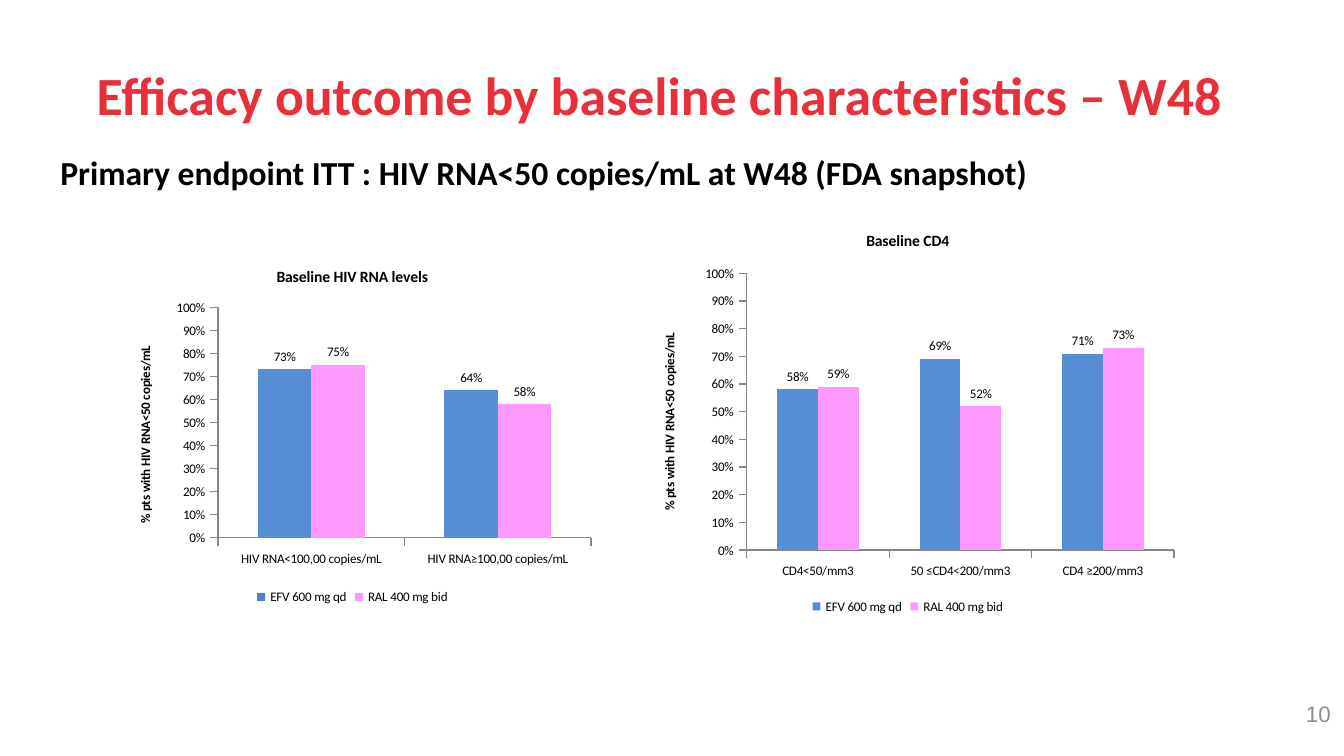
from lxml.etree import SubElement
from pptx import Presentation
from pptx.chart.data import CategoryChartData as ChartData
from pptx.dml.color import RGBColor
from pptx.enum.chart import XL_CHART_TYPE as ChartType
from pptx.enum.chart import XL_LABEL_POSITION as LabelPosition
from pptx.enum.chart import XL_LEGEND_POSITION as LegendPosition
from pptx.enum.chart import XL_TICK_MARK as TickMark
from pptx.enum.text import MSO_ANCHOR as Anchor
from pptx.enum.text import PP_ALIGN as Align
from pptx.oxml.ns import qn
from pptx.util import Cm, Pt

RED = RGBColor(0xE8, 0x30, 0x3B)
BLACK = RGBColor(0x00, 0x00, 0x00)
GRAY = RGBColor(0x8C, 0x8C, 0x8C)
AXIS_GRAY = RGBColor(0x86, 0x86, 0x86)
BLUE = RGBColor(0x55, 0x8E, 0xD5)
DARK_BLUE = RGBColor(0x4F, 0x81, 0xBD)
PINK = RGBColor(0xFF, 0x99, 0xFF)


def write(frame, text, size=7, bold=False, color=BLACK, font="Calibri", align=Align.LEFT):
    paragraph = frame.paragraphs[0]
    paragraph.alignment = align
    run = paragraph.add_run()
    run.text = text
    run.font.name = font
    run.font.size = Pt(size)
    run.font.bold = bold
    run.font.color.rgb = color


def set_layout(element, inner=False, **fractions):
    """Place a chart part by fractions of the chart's width and height."""
    layout = element.find(qn("c:layout"))
    if layout is None:
        layout = element.makeelement(qn("c:layout"))
        element.insert(0, layout)
    manual = SubElement(layout, qn("c:manualLayout"))
    if inner:
        SubElement(manual, qn("c:layoutTarget")).set("val", "inner")
    for name in ("xMode", "yMode"):
        SubElement(manual, qn(f"c:{name}")).set("val", "edge")
    for name, value in fractions.items():
        SubElement(manual, qn(f"c:{name}")).set("val", str(value))


class SlideBuilder:
    chart_size = 7
    series_names = ("EFV 600 mg qd", "RAL 400 mg bid")

    def __init__(self, slide):
        self.slide = slide

    def title(self, text, left, top, width, height):
        shape = self.slide.shapes.title
        shape.left, shape.top = Cm(left), Cm(top)
        shape.width, shape.height = Cm(width), Cm(height)
        shape.text_frame.vertical_anchor = Anchor.MIDDLE
        write(shape.text_frame, text, size=28.8, bold=True, color=RED)

    def text(self, text, left, top, width, height, anchor=Anchor.TOP, **style):
        shape = self.slide.shapes.add_textbox(Cm(left), Cm(top), Cm(width), Cm(height))
        shape.text_frame.word_wrap = True
        shape.text_frame.vertical_anchor = anchor
        write(shape.text_frame, text, **style)

    def chart(self, title, box, categories, values, plot, axis_title, first_color=BLUE,
              overlay=False):
        data = ChartData(number_format="0%")
        data.categories = categories
        for name, numbers in zip(self.series_names, values):
            data.add_series(name, numbers)
        chart = self.slide.shapes.add_chart(
            ChartType.COLUMN_CLUSTERED, *map(Cm, box), data).chart
        chart.font.name = "Calibri"
        chart.font.size = Pt(self.chart_size)
        chart.font.color.rgb = BLACK

        # Title and legend
        chart.has_title = True
        write(chart.chart_title.text_frame, title, size=8.4, bold=True, align=Align.CENTER)
        chart.chart_title.include_in_layout = overlay
        chart.has_legend = True
        chart.legend.position = LegendPosition.BOTTOM
        chart.legend.include_in_layout = False

        # Axes
        for axis in (chart.category_axis, chart.value_axis):
            axis.has_major_gridlines = False
            axis.major_tick_mark = TickMark.OUTSIDE
            axis.format.line.color.rgb = AXIS_GRAY
        axis = chart.value_axis
        axis.minimum_scale, axis.maximum_scale, axis.major_unit = 0, 1, 0.1
        axis.tick_labels.number_format = "0%"
        axis.tick_labels.number_format_is_linked = False
        write(axis.axis_title.text_frame, "% pts with HIV RNA<50 copies/mL",
              size=self.chart_size, bold=True, align=Align.CENTER)
        set_layout(axis.axis_title._element, **axis_title)
        set_layout(chart._chartSpace.chart.plotArea, inner=True, **plot)

        # Columns and value labels
        bars = chart.plots[0]
        bars.vary_by_categories = False
        bars.gap_width, bars.overlap = 150, 0
        for series, color in zip(bars.series, (first_color, PINK)):
            series.format.fill.solid()
            series.format.fill.fore_color.rgb = color
            labels = series.data_labels
            labels.show_value = True
            labels.position = LabelPosition.OUTSIDE_END
            labels.number_format = "0%"
            labels.number_format_is_linked = False
        if first_color != BLUE:
            for index in range(len(categories)):
                fill = bars.series[0].points[index].format.fill
                fill.solid()
                fill.fore_color.rgb = BLUE


def main():
    presentation = Presentation()
    presentation.slide_width, presentation.slide_height = Cm(25.4), Cm(14.29)
    builder = SlideBuilder(presentation.slides.add_slide(presentation.slide_layouts[5]))

    # Headings
    builder.title("Efficacy outcome by baseline characteristics – W48", 1.57, 0.58, 22.28, 2.39)
    builder.text("Primary endpoint ITT : HIV RNA<50 copies/mL at W48 (FDA snapshot)",
                 0.89, 2.74, 23.5, 1.02, size=18, bold=True)

    # Outcome by CD4 count and by viral load
    builder.chart(
        "Baseline CD4", (11.91, 4.01, 10.49, 7.7),
        ("CD4<50/mm3", "50 ≤CD4<200/mm3", "CD4 ≥200/mm3"),
        ((0.58, 0.69, 0.71), (0.59, 0.52, 0.73)),
        plot={"x": 0.21, "y": 0.15, "w": 0.77, "h": 0.68},
        axis_title={"x": 0.05, "y": 0.29})
    builder.chart(
        "Baseline HIV RNA levels", (1.96, 4.72, 9.4, 6.81),
        ("HIV RNA<100,00 copies/mL", "HIV RNA≥100,00 copies/mL"),
        ((0.73, 0.64), (0.75, 0.58)),
        plot={"x": 0.23, "y": 0.16, "w": 0.75, "h": 0.64},
        axis_title={"x": 0.06, "y": 0.26},
        first_color=DARK_BLUE, overlay=True)

    # Slide number
    builder.text("10", 19.48, 13, 5.92, 0.99, anchor=Anchor.MIDDLE,
                 size=12, color=GRAY, font="Arial", align=Align.RIGHT)

    presentation.save("out.pptx")


if __name__ == "__main__":
    main()
